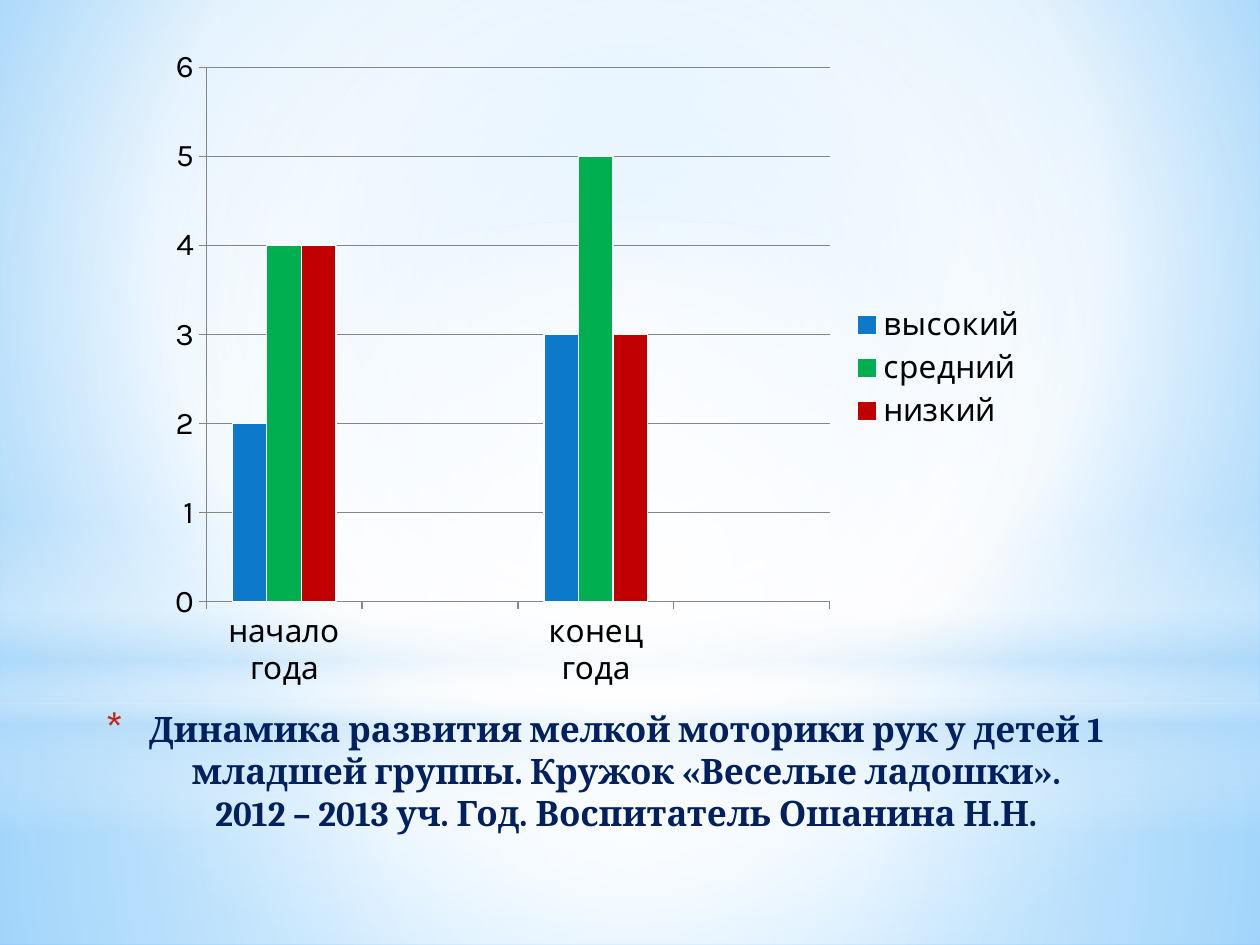
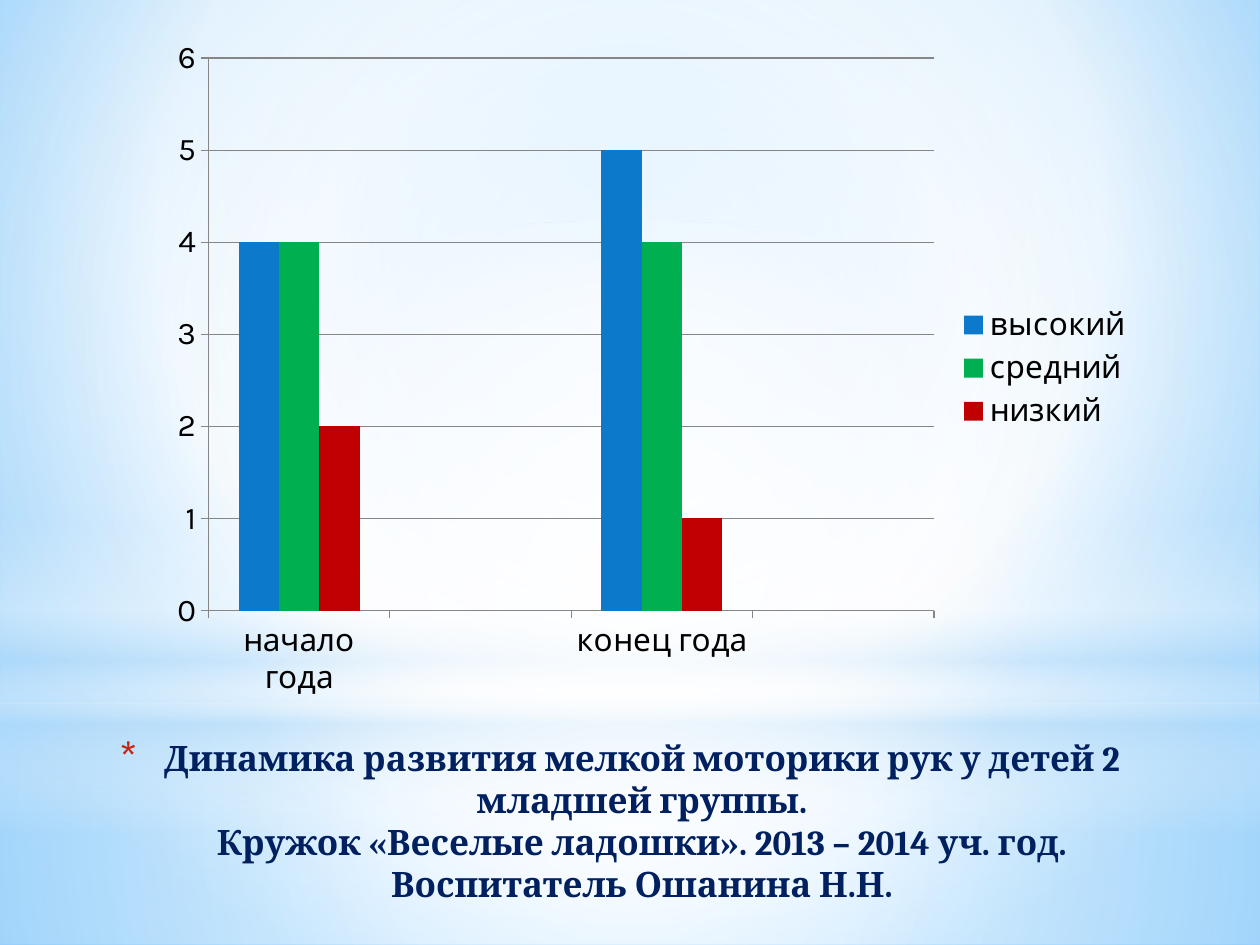
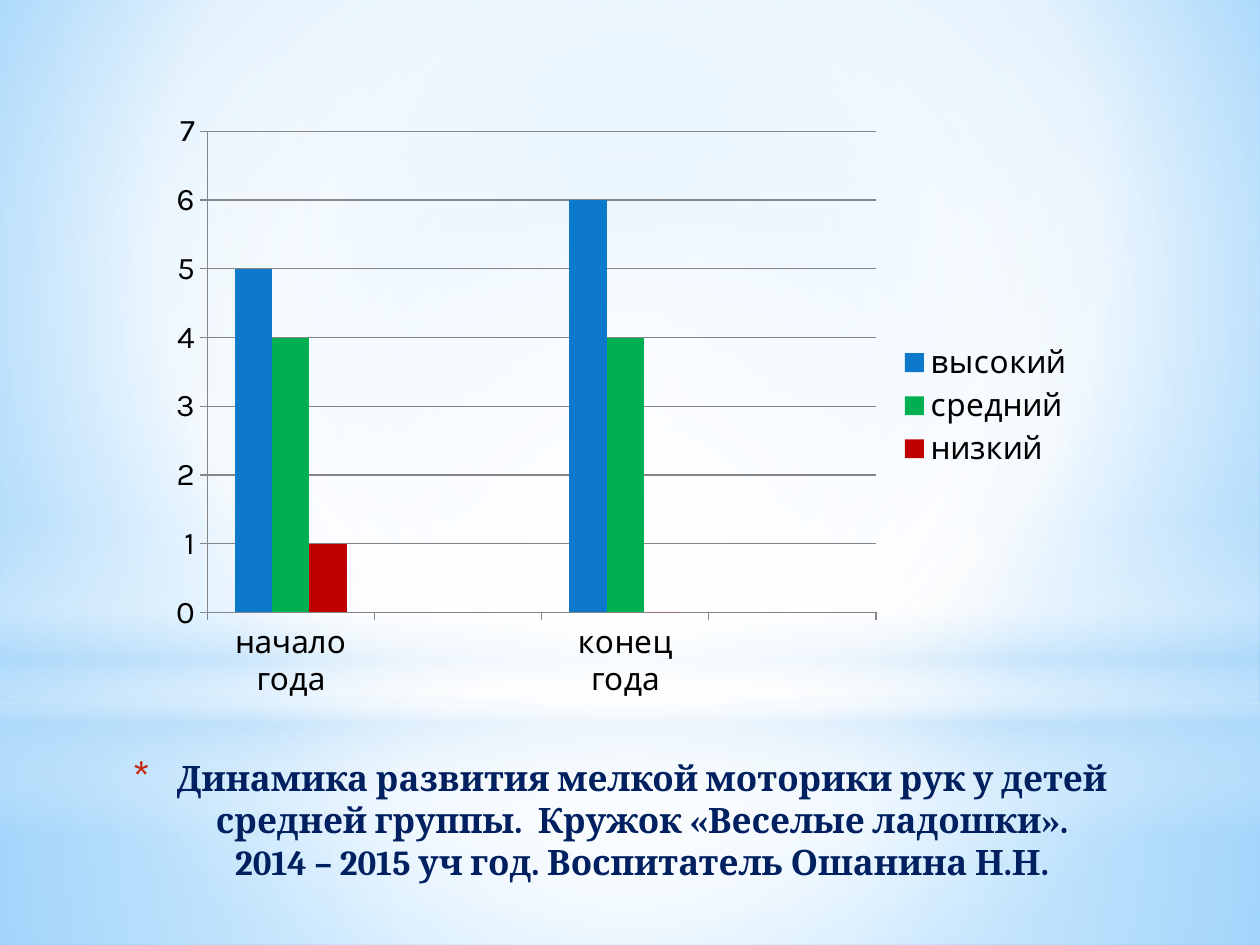
import pptx
import pptx.chart.data
import pptx.dml.color
import pptx.enum.chart
import pptx.enum.shapes
import pptx.enum.text
import pptx.oxml
import pptx.oxml.ns
import pptx.util

COLS, ROWS = 100, 75
WIDTH, HEIGHT = pptx.util.Inches(10), pptx.util.Inches(7.5)

COLORS = {
    "white": "FFFFFF", "haze": "B4DCFA", "sky": "9ED5FF", "azure": "5BB9FF",
    "title": "002060", "bullet": "C3260C", "text": "000000", "axis": "868686",
    "high": "0D79CA", "middle": "00B050", "low": "C00000",
}
CENTER = (50, 50, 50, 50)
BACKGROUND = [(0, "sky", 100), (60, "white", 100), (100, "azure", 100)]
RECT = pptx.enum.shapes.MSO_SHAPE.RECTANGLE
OVAL = pptx.enum.shapes.MSO_SHAPE.OVAL
BANDS = [
    (RECT, (0, 55.8, 100, 19.2), CENTER,
     [(0, "white", 91), (37, "white", 76), (100, "haze", 79)]),
    (RECT, (0, 0, 100, 55.8), CENTER,
     [(0, "white", 89), (48, "white", 62), (100, "haze", 79)]),
    (RECT, (0, 41.2, 100, 25), None,
     [(0, "white", 0), (29, "white", 30), (45, "haze", 40),
      (55, "white", 26), (65, "haze", 60), (100, "white", 0)]),
    (OVAL, (0, 17.5, 100, 55.8), CENTER,
     [(0, "white", 100), (56, "white", 0)]),
]

CATEGORIES = ["начало года", "", "конец года", ""]
LEVELS = [("высокий", "high"), ("средний", "middle"), ("низкий", "low")]
TITLE_FONT = {"name": "Cambria", "size": pptx.util.Pt(20), "bold": True}
CHART_FONT = {"name": "Karla", "size": pptx.util.Pt(18)}
AXIS = {
    "major_tick_mark": pptx.enum.chart.XL_TICK_MARK.OUTSIDE,
    "minor_tick_mark": pptx.enum.chart.XL_TICK_MARK.NONE,
}
LEGEND = {
    "position": pptx.enum.chart.XL_LEGEND_POSITION.RIGHT,
    "include_in_layout": False,
}

SLIDES = [
    {"title": "Динамика развития мелкой моторики рук у детей 1 младшей группы. "
              "Кружок «Веселые ладошки».\v"
              "2012 – 2013 уч. Год. Воспитатель Ошанина Н.Н.",
     "title_at": (5.1, 55.65, 85.7, 11.8), "chart_at": (12.5, 2.83, 70, 52.8),
     "start": (2, 4, 4), "end": (3, 5, 3), "top": 6, "outlined": True},
    {"title": "Динамика развития мелкой моторики рук у детей 2 младшей группы.\v"
              "Кружок «Веселые ладошки». 2013 – 2014 уч. год. "
              "Воспитатель Ошанина Н.Н.",
     "title_at": (7.5, 57.95, 83.4, 15), "chart_at": (12.5, 2.07, 78.45, 54.3),
     "start": (4, 4, 2), "end": (5, 4, 1), "top": 6, "outlined": False},
    {"title": "Динамика развития мелкой моторики рук у детей средней группы.  "
              "Кружок «Веселые ладошки».\v"
              "2014 – 2015 уч год. Воспитатель Ошанина Н.Н.",
     "title_at": (7.5, 59.55, 83.4, 11), "chart_at": (12.5, 8, 73.75, 48.4),
     "start": (5, 4, 1), "end": (6, 4, 0), "top": 7, "outlined": False},
]


def rgb(name):
    return pptx.dml.color.RGBColor.from_string(COLORS[name])


def box(col, row, cols, rows):
    return (int(WIDTH * col / COLS), int(HEIGHT * row / ROWS),
            int(WIDTH * cols / COLS), int(HEIGHT * rows / ROWS))


def apply(target, values):
    for name, value in values.items():
        setattr(target, name, value)


def xml(text):
    ns = pptx.oxml.ns.nsdecls("a")
    return pptx.oxml.parse_xml(text.replace(" ", f" {ns} ", 1))


def set_gradient(fill, element, stops, focus):
    fill.gradient()
    gs = "".join(
        f'<a:gs pos="{pos * 1000}"><a:srgbClr val="{COLORS[color]}">'
        f'<a:alpha val="{alpha * 1000}"/></a:srgbClr></a:gs>'
        for pos, color, alpha in stops)
    if focus:
        sides = " ".join(f'{k}="{v * 1000}"' for k, v in zip("ltrb", focus))
        way = f'<a:path path="circle"><a:fillToRect {sides}/></a:path>'
    else:
        way = '<a:lin ang="5400000" scaled="0"/>'
    old = element.find(".//" + pptx.oxml.ns.qn("a:gradFill"))
    old.getparent().replace(old, xml(
        f'<a:gradFill rotWithShape="1"><a:gsLst>{gs}</a:gsLst>{way}</a:gradFill>'))


def add_backdrop(s):
    set_gradient(s.background.fill, s.element, BACKGROUND, (20, 10, 20, 60))
    for kind, at, focus, stops in BANDS:
        sp = s.shapes.add_shape(kind, *box(*at))
        sp.shadow.inherit = False
        sp.line.fill.background()
        set_gradient(sp.fill, sp.element, stops, focus)


def add_title(s, text, at):
    tf = s.shapes.add_textbox(*box(*at)).text_frame
    tf.word_wrap = True
    p = tf.paragraphs[0]
    p.text = text
    p.alignment = pptx.enum.text.PP_ALIGN.CENTER
    for r in p.runs:
        apply(r.font, TITLE_FONT)
        r.font.color.rgb = rgb("title")
    pPr = p._p.get_or_add_pPr()
    indent = pptx.util.Inches(0.35)
    pPr.set("marL", str(indent))
    pPr.set("indent", str(-indent))
    for bullet in (f'<a:buClr ><a:srgbClr val="{COLORS["bullet"]}"/></a:buClr>',
                   '<a:buSzPct val="128000"/>', '<a:buFont typeface="Karla"/>',
                   '<a:buChar char="*"/>'):
        pPr.append(xml(bullet))


def style_line(line, color):
    line.color.rgb = rgb(color)
    line.width = pptx.util.Pt(0.75)


def add_level_chart(s, at, start, end, top, outlined):
    data = pptx.chart.data.CategoryChartData()
    data.categories = CATEGORIES
    for (name, _), first, last in zip(LEVELS, start, end):
        data.add_series(name, (first, None, last, None))
    kind = pptx.enum.chart.XL_CHART_TYPE.COLUMN_CLUSTERED
    chart = s.shapes.add_chart(kind, *box(*at), data).chart
    apply(chart, {"has_title": False, "has_legend": True})
    apply(chart.font, CHART_FONT)
    chart.font.color.rgb = rgb("text")
    apply(chart.legend, LEGEND)
    for axis in (chart.category_axis, chart.value_axis):
        apply(axis, AXIS)
        style_line(axis.format.line, "axis")
    apply(chart.value_axis, {"minimum_scale": 0, "maximum_scale": top,
                             "major_unit": 1, "has_major_gridlines": True})
    style_line(chart.value_axis.major_gridlines.format.line, "axis")
    plot = chart.plots[0]
    apply(plot, {"gap_width": 150, "overlap": 0, "vary_by_categories": False})
    for series, (_, color) in zip(plot.series, LEVELS):
        series.format.fill.solid()
        series.format.fill.fore_color.rgb = rgb(color)
        if outlined:
            style_line(series.format.line, "white")
        else:
            series.format.line.fill.background()


def main():
    prs = pptx.Presentation()
    apply(prs, {"slide_width": WIDTH, "slide_height": HEIGHT})
    for info in SLIDES:
        s = prs.slides.add_slide(prs.slide_layouts[6])
        add_backdrop(s)
        add_title(s, info["title"], info["title_at"])
        add_level_chart(s, info["chart_at"], info["start"], info["end"],
                        info["top"], info["outlined"])
    prs.save("out.pptx")


if __name__ == "__main__":
    main()
